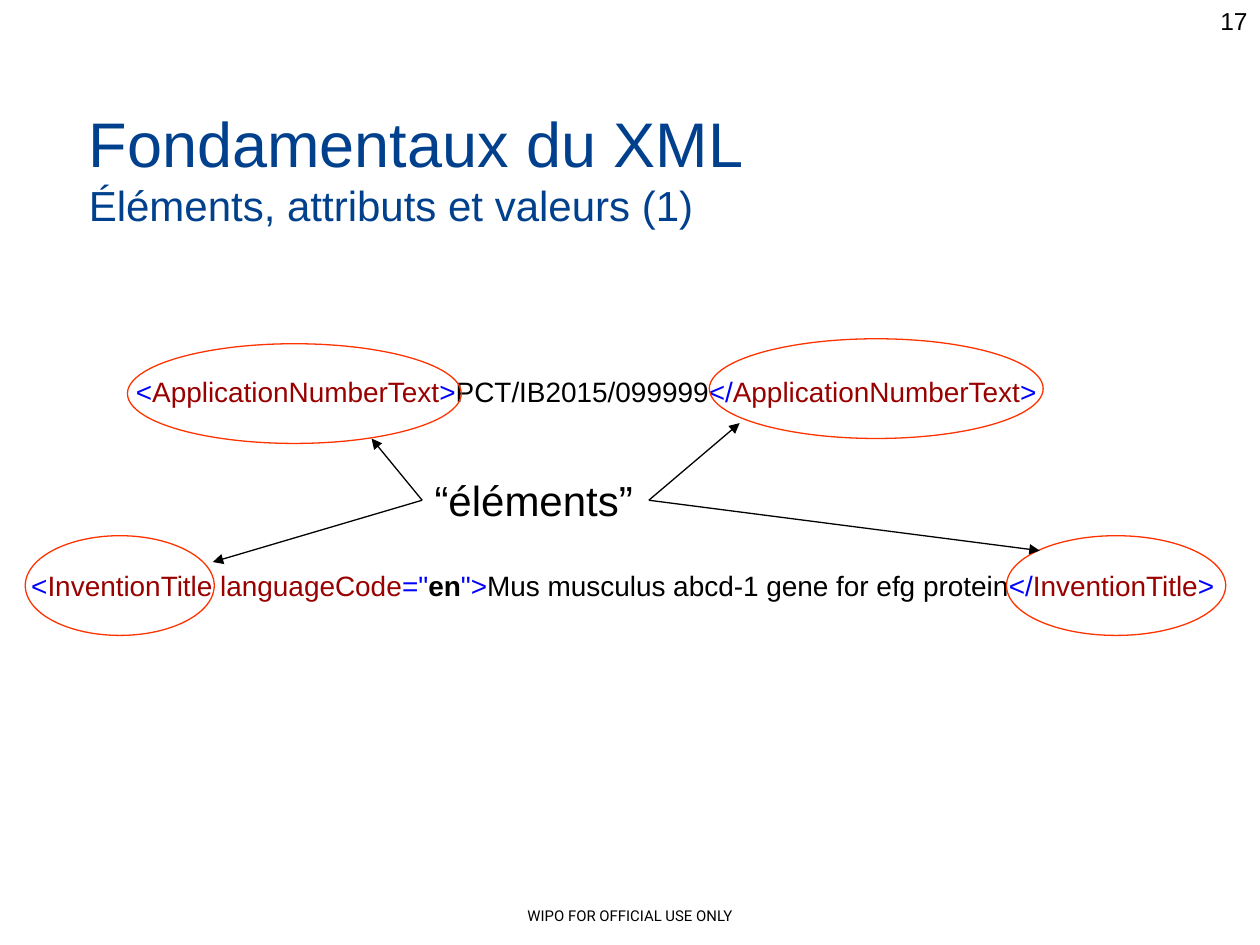
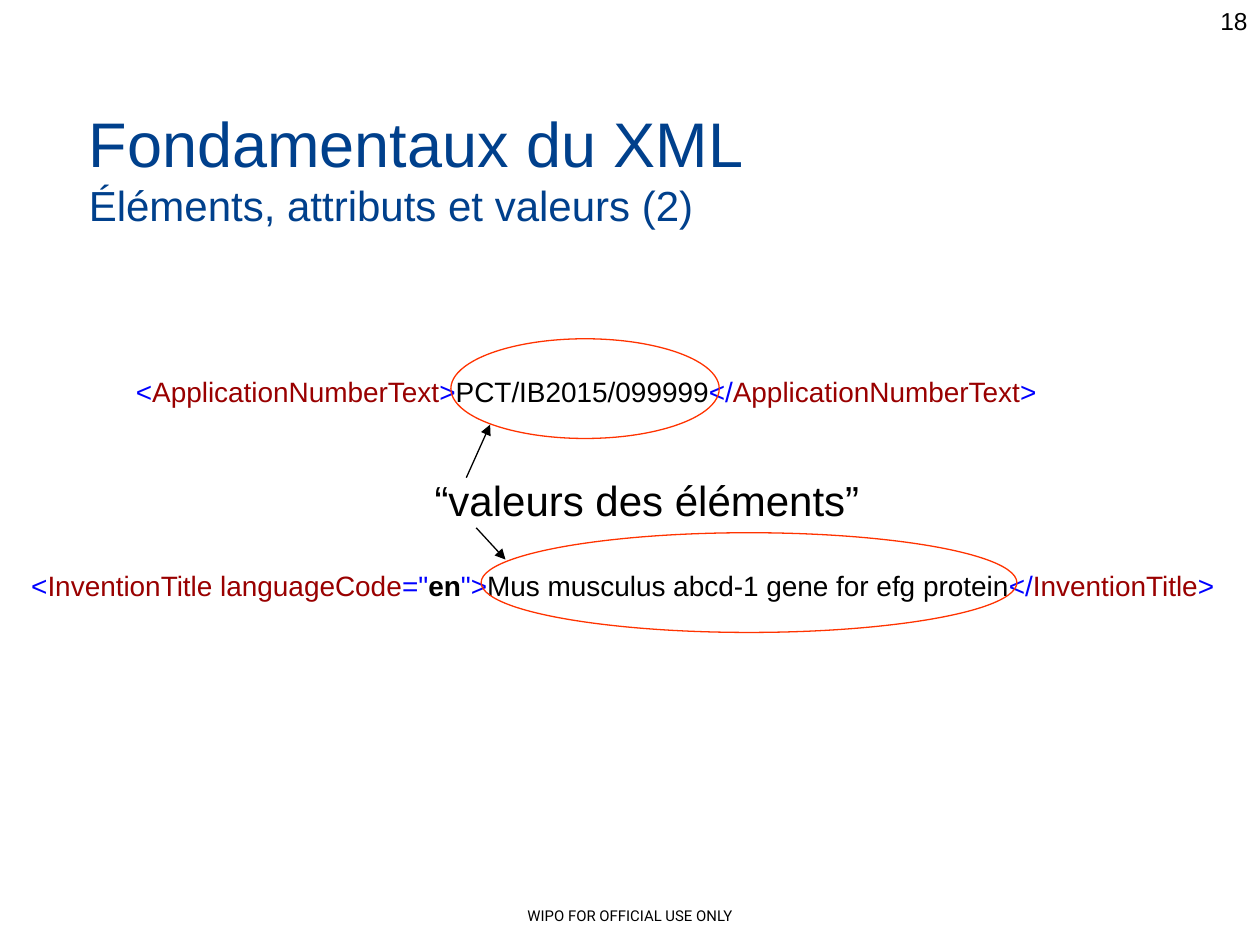
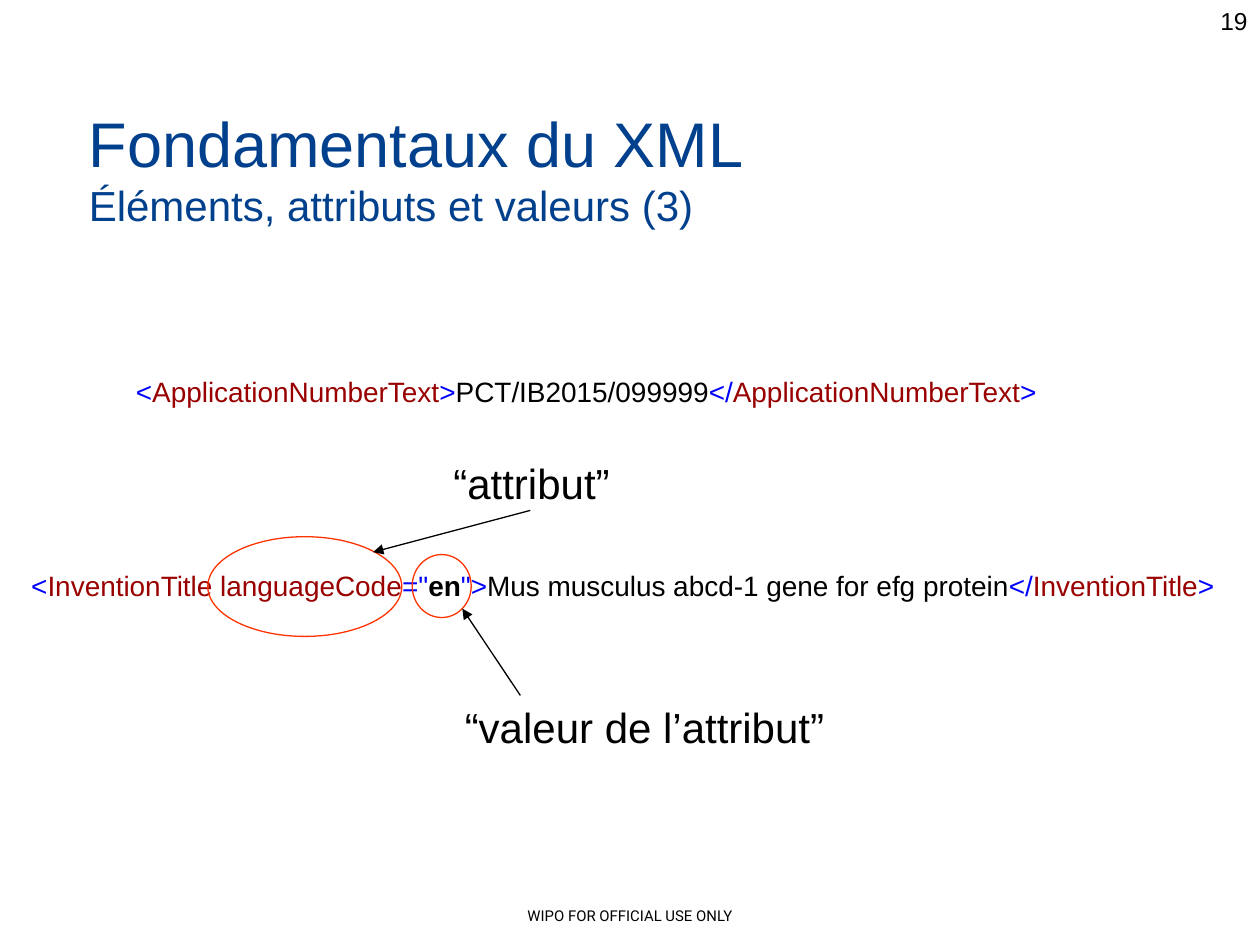
from dataclasses import dataclass
from typing import NamedTuple, Optional

import pptx
import pptx.dml.color
import pptx.enum.shapes
import pptx.enum.text
import pptx.oxml.ns
import pptx.util
from lxml import etree

Cm = pptx.util.Cm
Pt = pptx.util.Pt
ALIGN = pptx.enum.text.PP_ALIGN
qn = pptx.oxml.ns.qn

COLORS = {
    "title": "00408C",
    "text": "000000",
    "value": "000000",
    "attribute": "000000",
    "mark": "0000FF",
    "name": "990000",
    "ring": "FF3300",
}
TITLE_ONLY = 5
FIRST_NUMBER = 17
LINE_WIDTH = Pt(0.75)
TOP, LEFT, RIGHT = 0, 1, 3


class Box(NamedTuple):
    left: float
    top: float
    width: float
    height: float


class Label(NamedTuple):
    text: str
    left: float
    top: float
    width: float
    height: float = 1.27


class Ring(NamedTuple):
    left: float
    top: float
    width: float
    height: float = 2.01


class Arrow(NamedTuple):
    start: tuple[float, float]
    end: tuple[float, float]
    label_side: Optional[int] = None


class CodeLine(NamedTuple):
    box: Box
    tokens: list[tuple[str, str]]


@dataclass
class Example:
    labels: list[Label]
    rings: list[Ring]
    arrows: list[Arrow]


TITLE_BOX = Box(1.63, 1.83, 22.86, 3.18)
NUMBER_BOX = Box(19.48, 0, 5.92, 1.32)
FOOTER_BOX = Box(0, 18.16, 25.4, 0.61)

CODE_LINES = [
    CodeLine(Box(2.49, 7.42, 18.87, 0.94), [
        ("<", "mark"),
        ("ApplicationNumberText", "name"),
        (">", "mark"),
        ("PCT/IB2015/099999", "value"),
        ("</", "mark"),
        ("ApplicationNumberText", "name"),
        (">", "mark"),
    ]),
    CodeLine(Box(0.38, 11.33, 24.64, 0.94), [
        ("<", "mark"),
        ("InventionTitle languageCode", "name"),
        ('="', "mark"),
        ("en", "attribute"),
        ('">', "mark"),
        ("Mus musculus abcd-1 gene for efg protein", "value"),
        ("</", "mark"),
        ("InventionTitle", "name"),
        (">", "mark"),
    ]),
]

EXAMPLES = [
    Example(
        [Label("“éléments”", 8.51, 9.45, 4.57)],
        [
            Ring(2.57, 6.93, 6.73),
            Ring(0.51, 10.8, 3.81),
            Ring(14.3, 6.83, 6.73),
            Ring(20.29, 10.8, 4.42),
        ],
        [
            Arrow((13.08, 10.08), (14.91, 8.53), RIGHT),
            Arrow((13.08, 10.08), (20.96, 11.1), RIGHT),
            Arrow((8.51, 10.08), (7.49, 8.84), LEFT),
            Arrow((8.51, 10.08), (4.29, 11.33), LEFT),
        ],
    ),
    Example(
        [Label("“valeurs des éléments”", 8.51, 9.45, 9.17)],
        [Ring(9.09, 6.83, 5.41), Ring(9.7, 10.74, 10.8)],
        [
            Arrow((9.6, 10.64), (10.19, 11.28)),
            Arrow((9.4, 9.63), (9.88, 8.56)),
        ],
    ),
    Example(
        [
            Label("“attribut”", 8.89, 9.09, 3.71),
            Label("“valeur de l’attribut”", 9.12, 14.02, 7.85),
        ],
        [Ring(4.19, 10.82, 3.91), Ring(8.31, 11.18, 1.19, 1.27)],
        [
            Arrow((10.69, 10.29), (7.52, 11.13)),
            Arrow((10.49, 14.02), (9.32, 12.27)),
        ],
    ),
]


def rgb(key: str) -> pptx.dml.color.RGBColor:
    return pptx.dml.color.RGBColor.from_string(COLORS[key])


def set_font(font, size: float, color: Optional[str] = "text", name: str = "Arial") -> None:
    font.name = name
    font.size = Pt(size)
    if color:
        font.color.rgb = rgb(color)


def add_text(slide, box: Box, text: str, size: float, align=ALIGN.LEFT,
             name: str = "Arial", wrap: bool = True):
    sp = slide.shapes.add_textbox(*map(Cm, box))
    tf = sp.text_frame
    tf.word_wrap = wrap
    p = tf.paragraphs[0]
    p.text = text
    p.alignment = align
    set_font(p.font, size, name=name)
    return sp


def add_title(slide, lines: list[tuple[str, float]]) -> None:
    sp = slide.shapes.title
    sp.left, sp.top, sp.width, sp.height = map(Cm, TITLE_BOX)
    tf = sp.text_frame
    tf.auto_size = pptx.enum.text.MSO_AUTO_SIZE.NONE
    tf.vertical_anchor = pptx.enum.text.MSO_ANCHOR.TOP
    tf.margin_left, tf.margin_top = Cm(0.16), Cm(0.27)
    tf.text = "\n".join(text for text, _ in lines)
    for p, (_, size) in zip(tf.paragraphs, lines):
        p.alignment = ALIGN.LEFT
        set_font(p.font, size, "title")


def add_code(slide, line: CodeLine) -> None:
    sp = slide.shapes.add_textbox(*map(Cm, line.box))
    tf = sp.text_frame
    tf.word_wrap = False
    p = tf.paragraphs[0]
    set_font(p.font, 16, None)
    for text, kind in line.tokens:
        r = p.add_run()
        r.text = text
        r.font.color.rgb = rgb(kind)
        if kind == "attribute":
            r.font.bold = True


def add_ring(slide, ring: Ring) -> None:
    sp = slide.shapes.add_shape(pptx.enum.shapes.MSO_SHAPE.OVAL, *map(Cm, ring))
    sp.shadow.inherit = False
    sp.fill.background()
    sp.line.color.rgb = rgb("ring")
    sp.line.width = LINE_WIDTH


def add_arrow(slide, arrow: Arrow, label) -> None:
    cx = slide.shapes.add_connector(
        pptx.enum.shapes.MSO_CONNECTOR.STRAIGHT, *map(Cm, arrow.start + arrow.end))
    if arrow.label_side is not None:
        cx.begin_connect(label, arrow.label_side)
    cx.line.color.rgb = rgb("text")
    cx.line.width = LINE_WIDTH
    etree.SubElement(cx.line._get_or_add_ln(), qn("a:tailEnd"), type="triangle")
    etree.SubElement(cx._element.spPr, qn("a:effectLst"))


def add_example(prs, index: int, example: Example) -> None:
    slide = prs.slides.add_slide(prs.slide_layouts[TITLE_ONLY])
    add_title(slide, [
        ("Fondamentaux du XML", 36),
        (f"Éléments, attributs et valeurs ({index + 1})", 24),
    ])
    add_text(slide, FOOTER_BOX, "WIPO FOR OFFICIAL USE ONLY", 8.5, ALIGN.CENTER, "Roboto")
    add_text(slide, NUMBER_BOX, str(FIRST_NUMBER + index), 14, ALIGN.RIGHT)
    for line in CODE_LINES:
        add_code(slide, line)
    for ring in example.rings:
        add_ring(slide, ring)
    labels = [add_text(slide, Box(*label[1:]), label.text, 24, wrap=False)
              for label in example.labels]
    for arrow in example.arrows:
        add_arrow(slide, arrow, labels[0])


def main() -> None:
    prs = pptx.Presentation()
    prs.slide_width, prs.slide_height = Cm(25.4), Cm(19.05)
    for index, example in enumerate(EXAMPLES):
        add_example(prs, index, example)
    prs.save("out.pptx")


if __name__ == "__main__":
    main()
